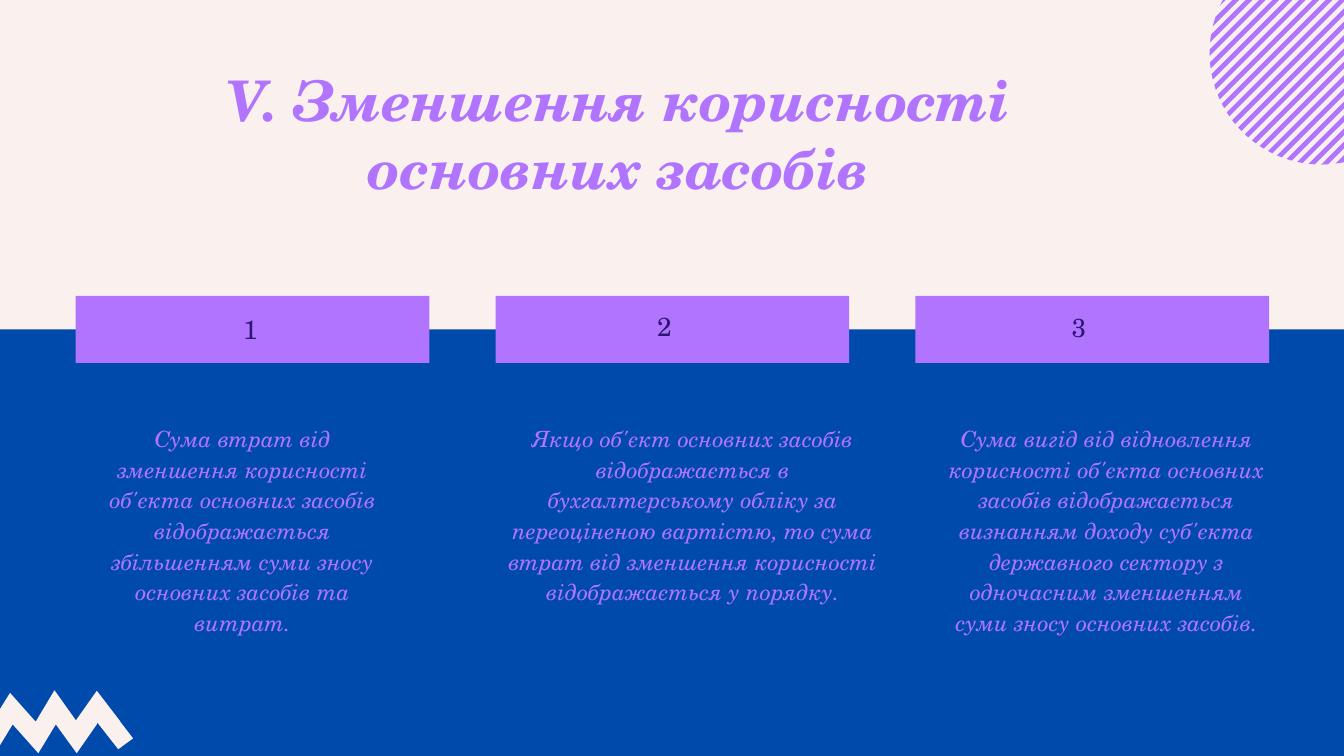
import math
from dataclasses import dataclass

import pptx
import pptx.dml.color
import pptx.enum.shapes
import pptx.enum.text
import pptx.util

Cm = pptx.util.Cm
ALIGN = pptx.enum.text.PP_ALIGN

SLIDE_WIDTH, SLIDE_HEIGHT = 50.8, 28.575
BAR_LEFT, BAR_STEP, BAR_WIDTH = 2.86, 15.87, 13.37
BAR_TOP, BAR_BOTTOM = 11.18, 13.72

# number, (left, top) of the number, (left, width, height) of the text, text
COLUMNS = [
    ("1", (8.94, 11.71), (3.99, 10.36, 9.45),
     "Сума втрат від зменшення корисності об'єкта основних засобів "
     "відображається збільшенням суми зносу основних засобів та витрат."),
    ("2", (24.59, 11.61), (19.08, 14.22, 7.04),
     "Якщо об'єкт основних засобів відображається в бухгалтерському обліку "
     "за переоціненою вартістю, то сума втрат від зменшення корисності "
     "відображається у порядку."),
    ("3", (40.26, 11.63), (35.71, 12.24, 8.18),
     "Сума вигід від відновлення корисності об'єкта основних засобів "
     "відображається визнанням доходу суб'єкта державного сектору з "
     "одночасним зменшенням суми зносу основних засобів."),
]

# Pieces of the zigzag: upper peaks, middle strip, lower peaks
ZIGZAG = [
    [(4.55, 27.28), (1.35, 27.28), (2.06, 26.09), (2.87, 27.23),
     (4.52, 27.23)],
    [(4.52, 27.23), (2.87, 27.23), (3.66, 26.11)],
    [(0, 28.17), (0, 26.8), (0.38, 26.19), (1.35, 27.28), (4.55, 27.28),
     (4.57, 27.31), (3.68, 27.31), (3.66, 27.38), (0.48, 27.38)],
    [(4.47, 28.32), (3.68, 27.31), (4.57, 27.31), (5.03, 27.91)],
    [(2.9, 28.47), (2.11, 27.38), (3.66, 27.38)],
    [(1.45, 28.47), (0.48, 27.38), (2.11, 27.38)],
]


@dataclass(frozen=True)
class Theme:
    font: str = "TeX Gyre Schola"
    blue: str = "004AAC"
    cream: str = "FAF1EF"
    purple: str = "B074FF"
    navy: str = "2D1673"
    title_size: int = 60
    number_size: int = 28
    body_size: int = 24


def rgb(value):
    return pptx.dml.color.RGBColor.from_string(value)


def write_text(frame, text, *, font, size, color, bold=False, italic=False,
               align=ALIGN.CENTER, line_spacing=None, space_before=0,
               letter_spacing=0):
    frame.word_wrap = True
    frame.auto_size = pptx.enum.text.MSO_AUTO_SIZE.SHAPE_TO_FIT_TEXT
    frame.vertical_anchor = pptx.enum.text.MSO_ANCHOR.TOP
    paragraph = frame.paragraphs[0]
    paragraph.alignment = align
    paragraph.line_spacing = line_spacing
    paragraph.space_before = pptx.util.Pt(space_before)
    run = paragraph.add_run()
    run.text = text
    run.font.name = font
    run.font.size = pptx.util.Pt(size)
    run.font.bold = bold
    run.font.italic = italic
    run.font.color.rgb = rgb(color)
    if letter_spacing:
        run.font._element.set("spc", str(round(letter_spacing * 100)))


class SlideBuilder:
    def __init__(self, slide, theme):
        self.slide = slide
        self.theme = theme

    def paint(self, shape, color):
        shape.shadow.inherit = False
        shape.fill.solid()
        shape.fill.fore_color.rgb = rgb(color)
        shape.line.fill.background()

    def rectangle(self, left, top, width, height, color):
        kind = pptx.enum.shapes.MSO_SHAPE.RECTANGLE
        area = self.slide.shapes.add_shape(
            kind, Cm(left), Cm(top), Cm(width), Cm(height))
        self.paint(area, color)
        return area

    def backdrop(self, color):
        """Fill the layout with a rectangle behind its placeholders."""
        area = self.rectangle(0, 0, SLIDE_WIDTH, SLIDE_HEIGHT, color)
        first = self.slide.slide_layout.placeholders[0].element
        first.addprevious(area.element)

    def polygons(self, outlines, color):
        """Draw closed outlines, given in centimetres, as one shape."""
        builder = None
        for outline in outlines:
            start, *rest = [(Cm(x), Cm(y)) for x, y in outline]
            if builder is None:
                builder = self.slide.shapes.build_freeform(*start)
            else:
                builder.move_to(*start)
            builder.add_line_segments(rest, close=True)
        self.paint(builder.convert_to_shape(), color)

    def title(self, text, left, top, width, height):
        title = self.slide.shapes.title
        title.left, title.top = Cm(left), Cm(top)
        title.width, title.height = Cm(width), Cm(height)
        # The placeholder comes first in the tree; lift it above the band.
        title.element.getparent().append(title.element)
        write_text(title.text_frame, text, font=self.theme.font,
                   size=self.theme.title_size, color=self.theme.purple,
                   bold=True, italic=True)

    def number(self, text, left, top):
        box = self.slide.shapes.add_textbox(
            Cm(left), Cm(top), Cm(3.18), Cm(1.45))
        write_text(box.text_frame, text, font=self.theme.font,
                   size=self.theme.number_size, color=self.theme.navy,
                   align=ALIGN.LEFT, letter_spacing=5.1)

    def body(self, text, left, top, width, height):
        box = self.slide.shapes.add_textbox(
            Cm(left), Cm(top), Cm(width), Cm(height))
        frame = box.text_frame
        frame.margin_left = frame.margin_right = frame.margin_bottom = 0
        frame.margin_top = Cm(0.03)
        write_text(frame, text, font=self.theme.font,
                   size=self.theme.body_size, color=self.theme.purple,
                   italic=True, line_spacing=1.14, space_before=1)


def circle_stripes(center_x=49.94, center_y=2.0, radius=4.22,
                   first=46.08, step=0.504, count=22, arc_steps=4):
    """Diagonal stripes x + y = const of a circle cut by the slide corner."""
    top_left = center_x - math.sqrt(radius ** 2 - center_y ** 2)

    def arc_point(total):
        along = (total - center_x - center_y) / 2
        across = math.sqrt(radius ** 2 / 2 - along ** 2)
        x, y = center_x + along - across, center_y + along + across
        return (x, y) if y >= 0 else (top_left, 0)

    def edge_point(total):
        x = min(max(total, top_left), SLIDE_WIDTH)
        return x, max(total - SLIDE_WIDTH, 0)

    stripes = []
    for index in range(count):
        near = first + index * step
        far = near + step / 2
        arc = [arc_point(far + (near - far) * i / arc_steps)
               for i in range(arc_steps + 1)]
        corner = [(SLIDE_WIDTH, 0)] if near < SLIDE_WIDTH < far else []
        stripes.append(arc + [edge_point(near)] + corner + [edge_point(far)])
    return stripes


def number_bars():
    lefts = [BAR_LEFT + index * BAR_STEP for index in range(len(COLUMNS))]
    return [[(left, BAR_TOP), (left + BAR_WIDTH, BAR_TOP),
             (left + BAR_WIDTH, BAR_BOTTOM), (left, BAR_BOTTOM)]
            for left in lefts]


def main():
    theme = Theme()
    presentation = pptx.Presentation()
    presentation.slide_width = Cm(SLIDE_WIDTH)
    presentation.slide_height = Cm(SLIDE_HEIGHT)
    title_only = presentation.slide_layouts[5]
    page = SlideBuilder(presentation.slides.add_slide(title_only), theme)

    page.backdrop(theme.blue)
    page.rectangle(0, 0, SLIDE_WIDTH, 12.45, theme.cream)
    page.polygons(number_bars(), theme.purple)
    page.polygons(circle_stripes(), theme.purple)
    page.polygons(ZIGZAG, theme.cream)
    page.title("V. Зменшення корисності основних засобів",
               5.03, 2.36, 36.73, 6.15)
    for number, number_at, (left, width, height), text in COLUMNS:
        page.number(number, *number_at)
        page.body(text, left, 15.9, width, height)

    presentation.save("out.pptx")


if __name__ == "__main__":
    main()
